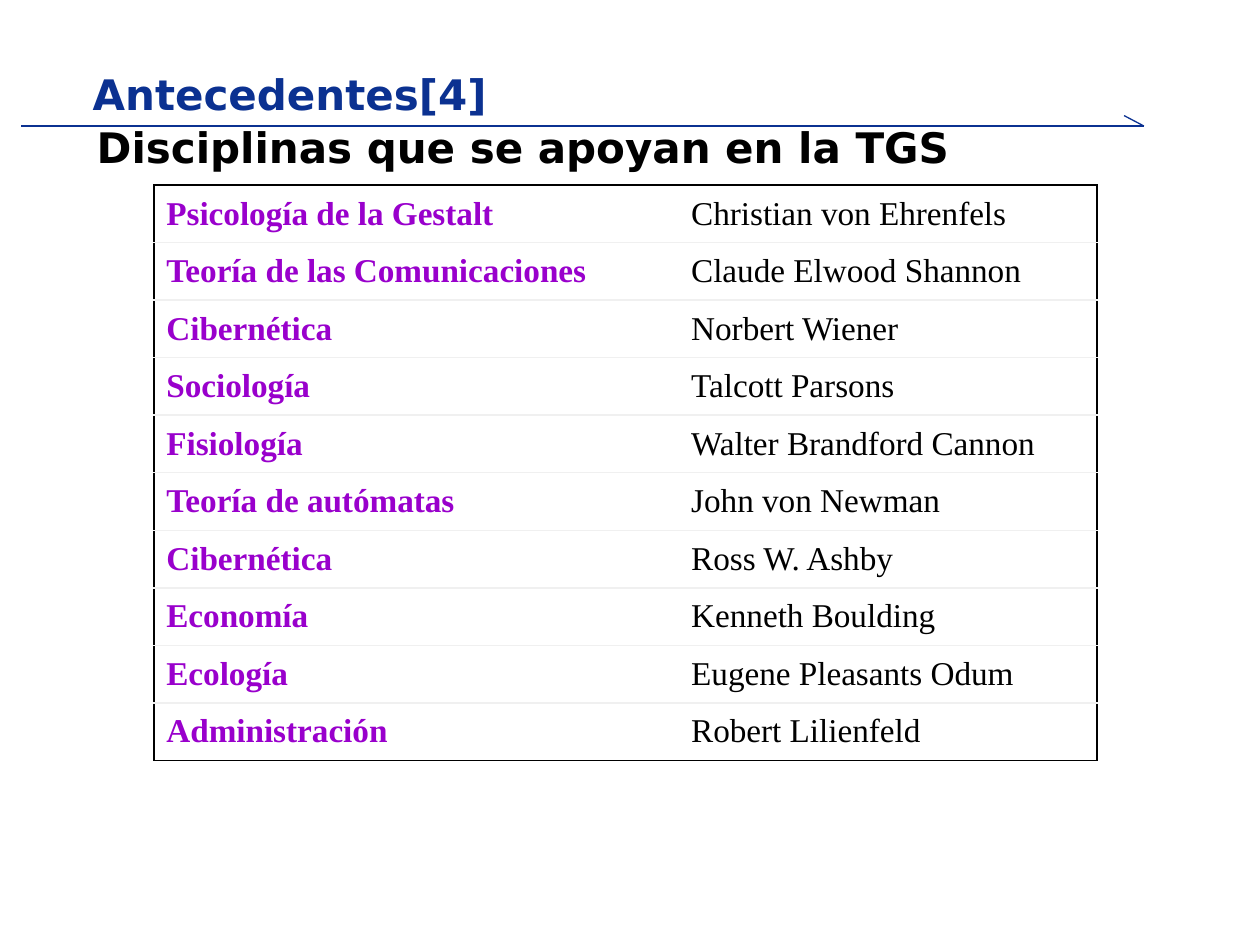
from dataclasses import dataclass

from lxml.etree import SubElement
from pptx import Presentation
from pptx.dml.color import RGBColor
from pptx.enum.shapes import MSO_CONNECTOR
from pptx.enum.text import MSO_ANCHOR, PP_ALIGN
from pptx.oxml.ns import qn
from pptx.util import Cm, Pt

TITLE = "Antecedentes[4]"
HEADING = "Disciplinas que se apoyan en la TGS"
ROWS = [
    ("Psicología de la Gestalt", "Christian von Ehrenfels"),
    ("Teoría de las Comunicaciones", "Claude Elwood Shannon"),
    ("Cibernética", "Norbert Wiener"),
    ("Sociología", "Talcott Parsons"),
    ("Fisiología", "Walter Brandford Cannon"),
    ("Teoría de autómatas", "John von Newman"),
    ("Cibernética", "Ross W. Ashby"),
    ("Economía", "Kenneth Boulding"),
    ("Ecología", "Eugene Pleasants Odum"),
    ("Administración", "Robert Lilienfeld"),
]


@dataclass(frozen=True)
class Theme:
    head: str = "DejaVu Sans"
    body: str = "Times New Roman"
    big: int = 24
    small: int = 19
    blue: str = "0B3191"
    violet: str = "9900CC"
    black: str = "000000"
    white: str = "FFFFFF"
    gray: str = "F0F0F0"


THEME = Theme()

# All in centimetres
WIDTHS = (10.58, 8.43)
ROW = 1.16
TABLE = (3.1, 3.73)
ARROW = [((0.43, 2.54), (23.06, 2.54)), ((22.66, 2.33), (23.06, 2.54))]
INDENT = 0.97


def style(par, name, size, color, bold):
    font = par.font
    font.name, font.size, font.bold = name, Pt(size), bold
    font.color.rgb = RGBColor.from_string(color)


def add_line(slide, start, end):
    ends = [Cm(v) for v in start + end]
    line = slide.shapes.add_connector(MSO_CONNECTOR.STRAIGHT, *ends)
    line.line.color.rgb = RGBColor.from_string(THEME.blue)
    line.line.width = Pt(0.75)
    SubElement(line._element.spPr, qn("a:effectLst"))


def add_label(slide, text, place, color, inset=0.25):
    box = slide.shapes.add_textbox(*(Cm(v) for v in place))
    frame = box.text_frame
    frame.word_wrap = True
    frame.vertical_anchor = MSO_ANCHOR.MIDDLE
    frame.margin_left = Cm(inset)
    par = frame.paragraphs[0]
    par.text = text
    style(par, THEME.head, THEME.big, color, True)


def set_edge(cell, side, color):
    """Draw one cell border, or hide it when color is None."""
    edge = SubElement(cell._tc.get_or_add_tcPr(), qn("a:ln" + side), w=str(Pt(1)))
    if color is None:
        SubElement(edge, qn("a:noFill"))
    else:
        fill = SubElement(edge, qn("a:solidFill"))
        SubElement(fill, qn("a:srgbClr"), val=color)


def fill_cell(cell, text, row, col):
    first, last = row == 0, row == len(ROWS) - 1
    edges = {
        "L": THEME.black if col == 0 else None,
        "R": THEME.black if col == 1 else None,
        "T": THEME.black if first else THEME.gray,
        "B": THEME.black if last else THEME.gray,
    }
    for side, color in edges.items():
        set_edge(cell, side, color)
    cell.fill.solid()
    cell.fill.fore_color.rgb = RGBColor.from_string(THEME.white)
    cell.vertical_anchor = MSO_ANCHOR.MIDDLE
    par = cell.text_frame.paragraphs[0]
    par.text = text
    par.alignment = PP_ALIGN.JUSTIFY
    props = par._p.get_or_add_pPr()
    props.set("marL", str(Cm(INDENT)))
    props.set("indent", str(-Cm(INDENT)))
    color = THEME.violet if col == 0 else THEME.black
    style(par, THEME.body, THEME.small, color, col == 0)


def add_grid(slide):
    size = (sum(WIDTHS), ROW * len(ROWS))
    place = [Cm(v) for v in TABLE + size]
    table = slide.shapes.add_table(len(ROWS), len(WIDTHS), *place).table
    table.first_row = table.horz_banding = False
    for col, width in zip(table.columns, WIDTHS):
        col.width = Cm(width)
    for r, texts in enumerate(ROWS):
        table.rows[r].height = Cm(ROW)
        for c, text in enumerate(texts):
            fill_cell(table.cell(r, c), text, r, c)


def main():
    deck = Presentation()
    deck.slide_width, deck.slide_height = Cm(25.4), Cm(19.05)
    slide = deck.slides.add_slide(deck.slide_layouts[6])
    for start, end in ARROW:
        add_line(slide, start, end)
    add_label(slide, TITLE, (1.27, 1.11, 21.39, 1.57), THEME.blue, inset=0.6)
    add_grid(slide)
    add_label(slide, HEADING, (1.7, 2.54, 21.39, 0.84), THEME.black)
    deck.save("out.pptx")


if __name__ == "__main__":
    main()
